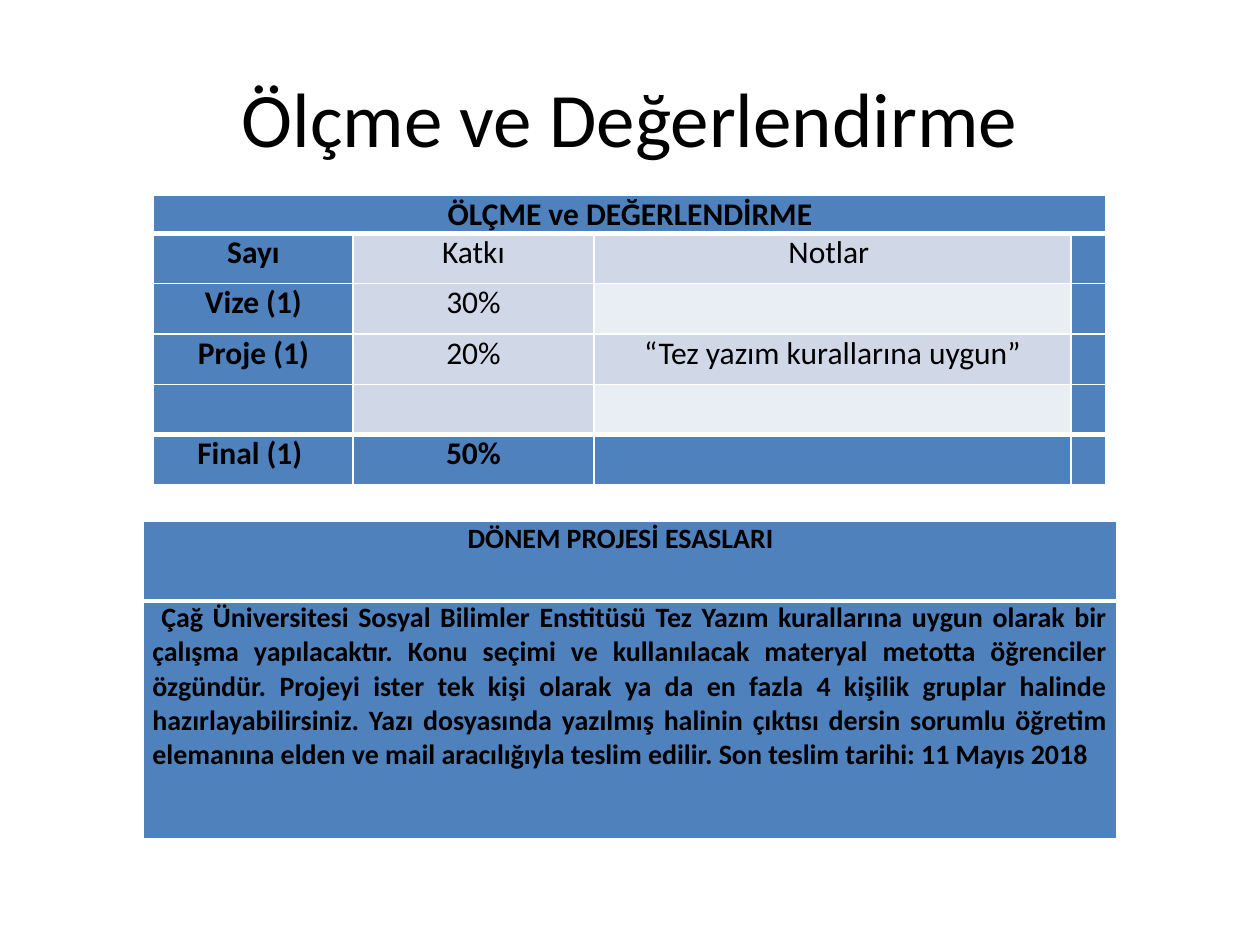
from pptx import Presentation
from pptx.dml.color import RGBColor as Rgb
from pptx.enum.text import MSO_ANCHOR as Anchor, PP_ALIGN as Align
from pptx.oxml import parse_xml as xml
from pptx.oxml.ns import nsdecls
from pptx.util import Inches, Pt

theme = dict(font="Calibri", ink="000000", line="FFFFFF", blue="4F81BD",
             band=("E9EDF4", "D0D8E8"), title=44, grid=18, note=16)
inset = dict(margin_left=Inches(0.07), margin_right=Inches(0.07),
             margin_top=0, margin_bottom=0)

deck = Presentation()
deck.slide_width, deck.slide_height = Inches(10), Inches(7.5)
wide, high = deck.slide_width, deck.slide_height
slide = deck.slides.add_slide(deck.slide_layouts[6])


def write(frame, text, size, bold, align):
    frame.word_wrap = True
    para = frame.paragraphs[0]
    para.text = text
    para.alignment = align
    para.font.color.rgb = Rgb.from_string(theme["ink"])
    for key, val in dict(name=theme["font"], size=Pt(size), bold=bold).items():
        setattr(para.font, key, val)
    for run in para.runs:
        run.font.color.rgb = Rgb.from_string(theme["ink"])
        for key, val in dict(name=theme["font"], size=Pt(size), bold=bold).items():
            setattr(run.font, key, val)
    return para


def draw(box, cols, rows, texts, size):
    count = len(rows)
    grid = slide.shapes.add_table(count, len(cols), *map(int, box)).table
    grid.first_row = grid.horz_banding = False
    for col, share in zip(grid.columns, cols):
        col.width = int(box[2] * share / sum(cols))
    for row, share in zip(grid.rows, rows):
        row.height = int(box[3] * share / sum(rows))
    for r, line in enumerate(texts):
        for c, text in enumerate(line):
            cell = grid.cell(r, c)
            for key, val in inset.items():
                setattr(cell, key, val)
            edges = dict(L=1, R=1, T=3 if r in (1, count - 1) else 1,
                         B=3 if r + 1 in (1, count - 1) else 1)
            for side, width in edges.items():
                cell._tc.get_or_add_tcPr().append(xml(
                    f'<a:ln{side} {nsdecls("a")} w="{Pt(width)}"><a:solidFill>'
                    f'<a:srgbClr val="{theme["line"]}"/></a:solidFill></a:ln{side}>'))
            plain = 0 < r < count - 1 and c in (1, 2)
            tint = theme["band"][r % 2 if c == 2 else 1] if plain else theme["blue"]
            cell.fill.solid()
            cell.fill.fore_color.rgb = Rgb.from_string(tint)
            write(cell.text_frame, text, size, not plain, Align.CENTER)
    return grid


head = slide.shapes.add_textbox(*map(int, (wide * 0.05, high * 0.04, wide * 0.9, high / 6)))
write(head.text_frame, "Ölçme ve Değerlendirme", theme["title"], False, Align.CENTER)
head.text_frame.vertical_anchor = Anchor.MIDDLE

marks = [
    ("ÖLÇME ve DEĞERLENDİRME", "", "", ""),
    ("Sayı", "Katkı", "Notlar ", ""),
    ("Vize (1)", "30%", "", ""),
    ("Proje (1)", "20%", "“Tez yazım kurallarına uygun”", ""),
    ("", "", "", ""),
    ("Final (1) ", "50%", "", ""),
]
grades = draw((wide * 0.122, high * 0.2067, wide * 0.756, high * 0.3067),
              (1.58, 1.91, 3.78, 0.28), (3, 4, 4, 4, 4, 4), marks, theme["grid"])
grades.cell(0, 0).merge(grades.cell(0, 3))

rules = (
    "Çağ Üniversitesi Sosyal Bilimler Enstitüsü Tez Yazım kurallarına uygun olarak bir "
    "çalışma yapılacaktır. Konu seçimi ve kullanılacak materyal metotta öğrenciler "
    "özgündür. Projeyi ister tek kişi olarak ya da en fazla 4 kişilik gruplar halinde "
    "hazırlayabilirsiniz. Yazı dosyasında yazılmış halinin çıktısı dersin sorumlu öğretim "
    "elemanına elden ve mail aracılığıyla teslim edilir. Son teslim tarihi: 11 Mayıs 2018")
terms = draw((wide * 0.114, high * 0.552, wide * 0.772, high * 0.336),
             (1,), (1, 3), [("DÖNEM PROJESİ ESASLARI",), (rules,)], theme["note"])
terms.cell(0, 0).margin_right = Inches(0.22)
para = terms.cell(1, 0).text_frame.paragraphs[0]
para.alignment = Align.JUSTIFY
para._p.get_or_add_pPr().set("indent", str(Inches(0.07)))

deck.save("out.pptx")
